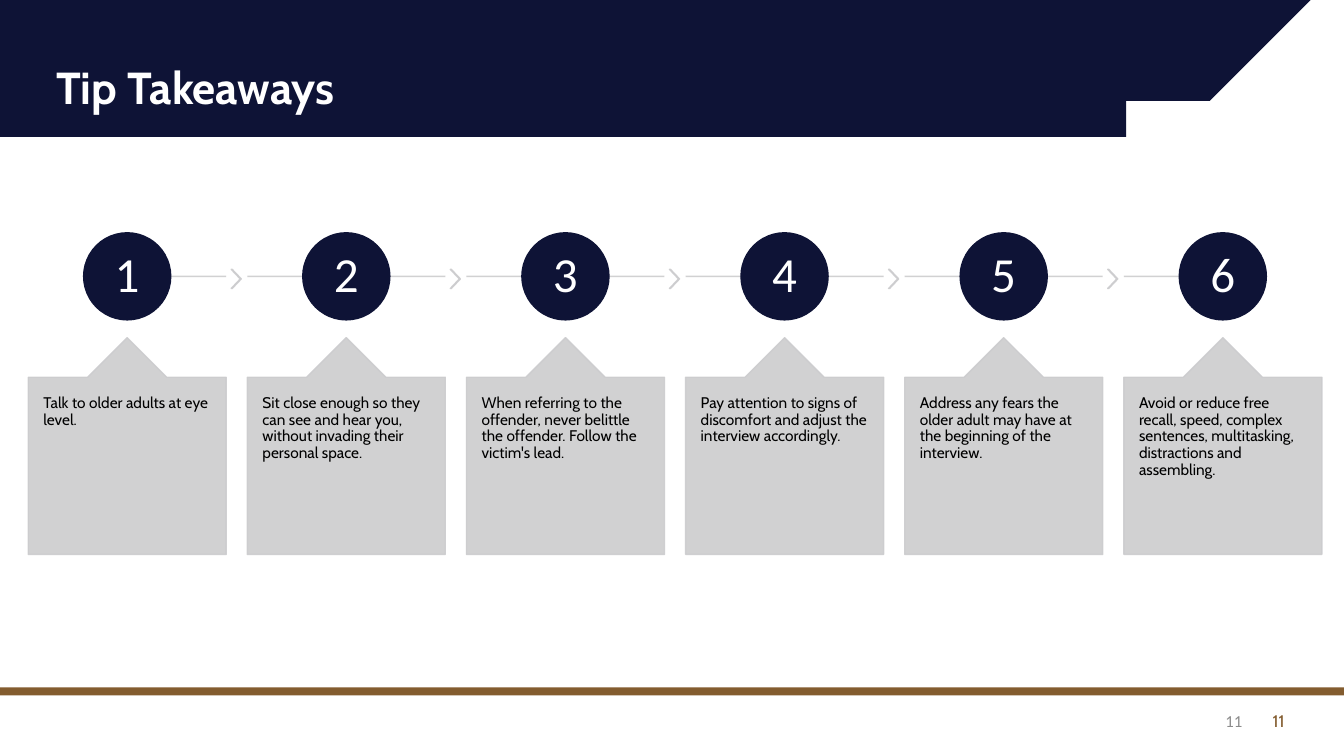
from lxml.etree import SubElement
from pptx import Presentation
from pptx.dml.color import RGBColor
from pptx.enum.shapes import MSO_CONNECTOR, MSO_SHAPE
from pptx.enum.text import MSO_ANCHOR, PP_ALIGN
from pptx.oxml.ns import qn
from pptx.util import Inches, Pt

COLORS = {
    "navy": "0E1336",
    "bronze": "835C2F",
    "silver": "CCCCCE",
    "gray": "8C8C8C",
    "black": "000000",
    "white": "FFFFFF",
}
SLIDE_WIDTH, SLIDE_HEIGHT = 13.33, 7.5
COLUMN_GAP = 0.21
TIPS = [
    "Talk to older adults at eye level.",
    "Sit close enough so they can see and hear you, without invading their personal space.",
    "When referring to the offender, never belittle the offender. Follow the victim's lead.",
    "Pay attention to signs of discomfort and adjust the interview accordingly.",
    "Address any fears the older adult may have at the beginning of the interview.",
    "Avoid or reduce free recall, speed, complex sentences, multitasking, distractions and assembling.",
]


def color(name):
    return RGBColor.from_string(COLORS[name])


def paint(fill, name, opacity=100):
    fill.solid()
    fill.fore_color.rgb = color(name)
    if opacity < 100:
        for tint in fill._xPr.iter(qn("a:srgbClr")):
            SubElement(tint, qn("a:alpha"), val=str(opacity * 1000))


def style_shape(shape, name, opacity=100, outlined=True):
    shape.shadow.inherit = False
    paint(shape.fill, name, opacity)
    if outlined:
        shape.line.width = Pt(1)
        paint(shape.line.fill, name, opacity)
    else:
        shape.line.fill.background()


def add_shape(slide, kind, box, name, opacity=100, outlined=True, adjustments=()):
    shape = slide.shapes.add_shape(kind, *map(Inches, box))
    for index, value in enumerate(adjustments):
        shape.adjustments[index] = value
    style_shape(shape, name, opacity, outlined)
    return shape


def write(shape, text, size, font, name, align=PP_ALIGN.LEFT, anchor=MSO_ANCHOR.TOP,
          insets=(0.1, 0.05), bold=False, spacing=0.9):
    frame = shape.text_frame
    frame.word_wrap = True
    frame.vertical_anchor = anchor
    frame.margin_left = frame.margin_right = Inches(insets[0])
    frame.margin_top = frame.margin_bottom = Inches(insets[1])
    paragraph = frame.paragraphs[0]
    paragraph.alignment = align
    paragraph.line_spacing = spacing
    run = paragraph.add_run()
    run.text = text
    run.font.name = font
    run.font.size = Pt(size)
    run.font.bold = bold
    run.font.color.rgb = color(name)


def add_line(slide, start, end, y):
    line = slide.shapes.add_connector(
        MSO_CONNECTOR.STRAIGHT, Inches(start), Inches(y), Inches(end), Inches(y))
    SubElement(line._element.spPr, qn("a:effectLst"))
    line.line.width = Pt(1)
    paint(line.line.fill, "silver", 90)


def curve_point(points, t):
    weights = ((1 - t) ** 3, 3 * t * (1 - t) ** 2, 3 * t * t * (1 - t), t ** 3)
    return tuple(sum(w * point[axis] for w, point in zip(weights, points)) for axis in (0, 1))


def draw_header(slide, box):
    left, top, width, height = box
    bar_width = width * 0.855
    bar_height = height - 0.01
    corner = [(left + x, top + y) for x, y in ((11.68, 1.37), (11.82, 1.37), (11.83, 1.38), (12, 1.2))]
    outline = [curve_point(corner, step / 12) for step in range(13)]
    outline += [(left + width, top), (left + 11.14, top)]
    builder = slide.shapes.build_freeform(left + 11.14, top + bar_height, scale=Inches(1))
    builder.add_line_segments(outline, close=True)
    style_shape(builder.convert_to_shape(), "navy", outlined=False)
    add_shape(slide, MSO_SHAPE.RECTANGLE, (left, top, bar_width, bar_height), "navy", outlined=False)
    title = slide.shapes.add_textbox(
        Inches(left + 0.46), Inches(top + 0.6), Inches(12.39), Inches(0.73))
    write(title, "Tip Takeaways", 32, "Cabin", "white", bold=True)


def draw_step(slide, box, number, count, tip):
    left, top, width, height = box
    diameter = width * 0.44
    center = left + width / 2
    middle = top + diameter / 2
    is_last = number == count
    add_line(slide, center if number == 1 else left, center if is_last else left + width, middle)
    if not is_last:
        add_shape(slide, MSO_SHAPE.CHEVRON, (left + width + 0.05, middle - 0.07, 0.1, 0.19),
                  "silver", 90, adjustments=[0.9])
    circle = add_shape(slide, MSO_SHAPE.OVAL,
                       (center - diameter / 2, top, diameter, diameter), "navy")
    write(circle, str(number), 35, "Calibri", "white", PP_ALIGN.CENTER, MSO_ANCHOR.MIDDLE, (0.03, 0.03))
    card_height = 2.15
    card = add_shape(slide, MSO_SHAPE.UP_ARROW_CALLOUT,
                     (left, top + height - card_height, width, card_height),
                     "silver", 90, adjustments=[0.5, 0.2, 0.2, 1])
    write(card, tip, 11, "Cabin", "black", insets=(0.15, 0.18))


def draw_steps(slide, box, tips):
    left, top, width, height = box
    column = (width - COLUMN_GAP * (len(tips) - 1)) / len(tips)
    for index, tip in enumerate(tips):
        step_left = left + index * (column + COLUMN_GAP)
        draw_step(slide, (step_left, top, column, height), index + 1, len(tips), tip)


def draw_footer(slide, box):
    left, top, width, height = box
    add_shape(slide, MSO_SHAPE.RECTANGLE, (left, top, width, 0.08), "bronze", outlined=False)
    for offset, font, name in ((9.84, "Cabin", "bronze"), (9.42, "Calibri", "gray")):
        number = slide.shapes.add_textbox(
            Inches(left + offset), Inches(top + 0.13), Inches(3), Inches(0.4))
        write(number, "11", 12, font, name, PP_ALIGN.RIGHT, MSO_ANCHOR.MIDDLE, spacing=1.0)


def main():
    presentation = Presentation()
    presentation.slide_width = Inches(SLIDE_WIDTH)
    presentation.slide_height = Inches(SLIDE_HEIGHT)
    slide = presentation.slides.add_slide(presentation.slide_layouts[6])
    draw_header(slide, (0, 0, SLIDE_WIDTH * 0.98, 1.37))
    draw_footer(slide, (0, 6.82, SLIDE_WIDTH, SLIDE_HEIGHT - 6.82))
    draw_steps(slide, (0.28, 2.31, 12.83, 3.19), TIPS)
    presentation.save("out.pptx")


if __name__ == "__main__":
    main()
